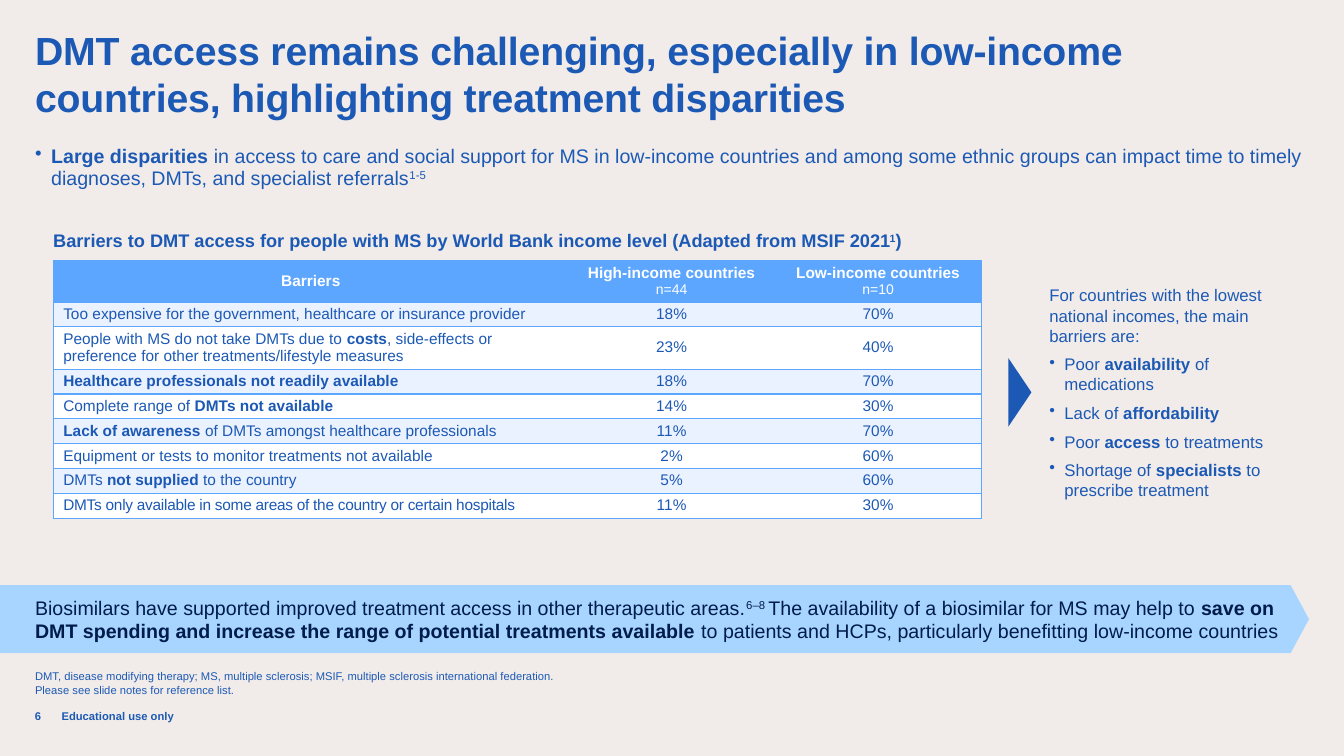
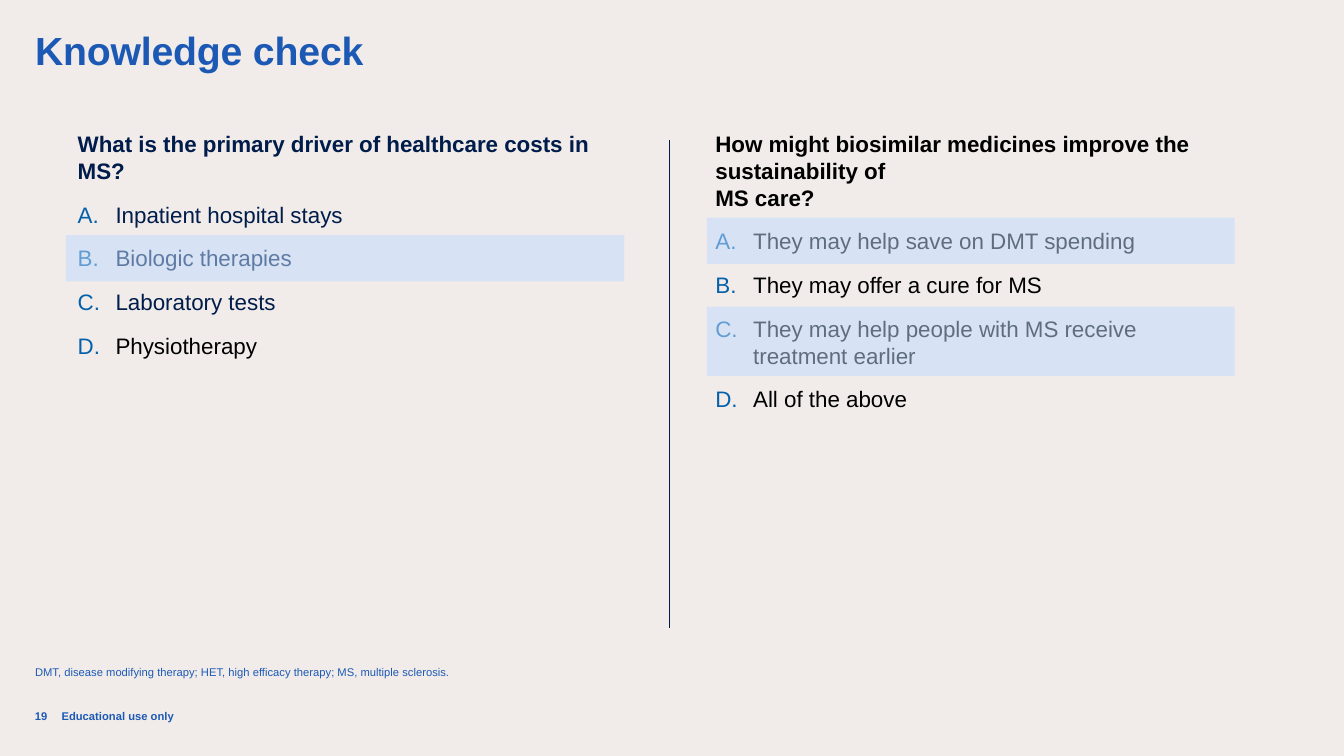
import pptx
import pptx.util
from lxml import etree
from pptx.dml.color import RGBColor
from pptx.enum.shapes import MSO_CONNECTOR, MSO_SHAPE
from pptx.enum.text import MSO_ANCHOR, PP_ALIGN
from pptx.oxml.ns import qn

Pt = pptx.util.Pt


class Theme:
    font = "Arial"
    paper, white, black = "F1ECE9", "FFFFFF", "000000"
    blue, navy, marker = "1C59B5", "001C4A", "0460A9"
    header, stripe, band, highlight = "5DA6FF", "EAF1FF", "A8D5FF", "BEDBFF"
    title, question, body, caption, aside, cell, cell_note, small = 28, 16, 14, 13, 12, 11, 10, 8
    left, width = 25, 910
    tight = 0.95


# In the texts, **...** is bold and ^...^ is superscript.
ACCESS = {
    "number": 6,
    "title": "DMT access remains challenging, especially in low-income countries, "
             "highlighting treatment disparities",
    "notes": ["DMT, disease modifying therapy; MS, multiple sclerosis; "
              "MSIF, multiple sclerosis international federation.",
              "Please see slide notes for reference list."],
    "notes_bottom": 498,
    "lead": "**Large disparities** in access to care and social support for MS in low-income "
            "countries and among some ethnic groups can impact time to timely diagnoses, DMTs, "
            "and specialist referrals^1-5^",
    "caption": "**Barriers to DMT access for people with MS by World Bank income level "
               "(Adapted from MSIF 2021^1^)**",
    "columns": [("Barriers", None, 368), ("High-income countries", "n=44", 147.5),
                ("Low-income countries", "n=10", 147.5)],
    "rows": [
        ("Too expensive for the government, healthcare or insurance provider", 18, 70),
        ("People with MS do not take DMTs due to **costs**, side-effects or preference "
         "for other treatments/lifestyle measures", 23, 40),
        ("**Healthcare professionals not readily available**", 18, 70),
        ("Complete range of **DMTs not available**", 14, 30),
        ("**Lack of awareness** of DMTs amongst healthcare professionals", 11, 70),
        ("Equipment or tests to monitor treatments not available", 2, 60),
        ("DMTs **not supplied** to the country", 5, 60),
        ("DMTs only available in some areas of the country or certain hospitals", 11, 30),
    ],
    "row_heights": [27.5, 17.3, 29] + [17.3] * 6,
    "aside_intro": "For countries with the lowest national incomes, the main barriers are:",
    "aside": ["Poor **availability** of medications", "Lack of **affordability**",
              "Poor **access** to treatments",
              "Shortage of **specialists** to\nprescribe treatment"],
    "message": "Biosimilars have supported improved treatment access in other therapeutic "
               "areas.^6–8 ^The availability of a biosimilar for MS may help to **save on DMT "
               "spending and increase the range of potential treatments available** to patients "
               "and HCPs, particularly benefitting low-income countries",
}
QUIZ = {
    "number": 19,
    "title": "Knowledge check",
    "notes": ["DMT, disease modifying therapy; HET, high efficacy therapy; MS, multiple sclerosis."],
    "notes_bottom": 484.8,
    "questions": [
        {"box": (55.5, 93, 400, 364),
         "question": ("What is the primary driver of healthcare costs in MS?", Theme.navy),
         "answers": [("Inpatient hospital stays", Theme.navy), ("Biologic therapies", Theme.navy),
                     ("Laboratory tests", Theme.navy), ("Physiotherapy", Theme.black)],
         "highlights": [(47, 168, 399, 33)]},
        {"box": (511, 93, 391, 364),
         "question": ("How might biosimilar medicines improve the sustainability of\nMS care?",
                      Theme.black),
         "answers": [("They may help save on DMT spending", Theme.black),
                     ("They may offer a cure for MS", Theme.black),
                     ("They may help people with MS receive\ntreatment earlier", Theme.black),
                     ("All of the above", Theme.black)],
         "highlights": [(505, 155.5, 377, 33), (505, 219, 377, 49.5)]},
    ],
}


def rgb(value):
    return RGBColor.from_string(value)


def write(p, text, size, color=Theme.blue, spacing=0):
    """Turn marked-up text into formatted runs; spacing is in hundredths of a point."""
    for i, weight in enumerate(text.split("**")):
        for j, level in enumerate(weight.split("^")):
            for k, line in enumerate(level.split("\n")):
                if k:
                    p.add_line_break()
                if not line:
                    continue
                r = p.add_run()
                r.text = line
                f = r.font
                f.name, f.size, f.bold = Theme.font, Pt(size), i % 2 == 1
                f.color.rgb = rgb(color)
                if j % 2:
                    f._element.set("baseline", "30000")
                if spacing:
                    f._element.set("spc", str(spacing))


def add_bullet(p, indent, color, char=None):
    """Hang a bullet character, or a capital letter when no character is given."""
    ppr = p._p.get_or_add_pPr()
    ppr.set("marL", str(Pt(indent)))
    ppr.set("indent", str(-Pt(indent)))
    clr = etree.SubElement(ppr, qn("a:buClr"))
    etree.SubElement(clr, qn("a:srgbClr"), val=color)
    if char:
        etree.SubElement(ppr, qn("a:buChar"), char=char)
    else:
        etree.SubElement(ppr, qn("a:buAutoNum"), type="alphaUcPeriod")


def set_frame(tf, margins=(0, 0, 0, 0), anchor=MSO_ANCHOR.TOP):
    tf.word_wrap = True
    tf.vertical_anchor = anchor
    tf.margin_left, tf.margin_top, tf.margin_right, tf.margin_bottom = map(Pt, margins)


def add_text(s, box, texts, size, color=Theme.blue, anchor=MSO_ANCHOR.TOP, spacing=0):
    tf = s.shapes.add_textbox(*map(Pt, box)).text_frame
    set_frame(tf, anchor=anchor)
    for i, text in enumerate(texts):
        p = tf.add_paragraph() if i else tf.paragraphs[0]
        write(p, text, size, color, spacing)
    return tf.paragraphs


def add_block(s, preset, box, fill, opacity=None):
    sp = s.shapes.add_shape(preset, *map(Pt, box))
    sp.shadow.inherit = False
    sp.line.fill.background()
    sp.fill.solid()
    sp.fill.fore_color.rgb = rgb(fill)
    if opacity:
        clr = sp._element.spPr.find(".//" + qn("a:srgbClr"))
        etree.SubElement(clr, qn("a:alpha"), val=str(opacity * 1000))
    return sp


def add_slide(prs, content):
    """Add a slide with the shared title, abbreviations and footer."""
    s = prs.slides.add_slide(prs.slide_layouts[6])
    s.background.fill.solid()
    s.background.fill.fore_color.rgb = rgb(Theme.paper)
    add_text(s, (Theme.left, 19, Theme.width, 87), [f"**{content['title']}**"],
             Theme.title, spacing=-10)
    height = 40
    notes = add_text(s, (Theme.left, content["notes_bottom"] - height, Theme.width, height),
                     content["notes"], Theme.small, anchor=MSO_ANCHOR.BOTTOM)
    for i, p in enumerate(notes):
        p.line_spacing = Theme.tight
        p.space_before = Pt(1 if i else 0)
    for x, w, text in ((Theme.left, 16, content["number"]), (44, 324, "Educational use only")):
        add_text(s, (x, 507, w, 14), [f"**{text}**"], Theme.small)
    return s


def set_borders(cell, visible):
    tcpr = cell._tc.get_or_add_tcPr()
    for i, side in enumerate("LRTB"):
        ln = etree.Element(qn(f"a:ln{side}"), w=str(Pt(1)))
        if side in visible:
            fill = etree.SubElement(ln, qn("a:solidFill"))
            etree.SubElement(fill, qn("a:srgbClr"), val=Theme.header)
        else:
            etree.SubElement(ln, qn("a:noFill"))
        tcpr.insert(i, ln)


def fill_cell(cell, lines, fill, color, centred, borders, spacing=0):
    """Fill a cell with (text, size) lines."""
    cell.margin_left = cell.margin_right = Pt(7.2)
    cell.margin_top = cell.margin_bottom = Pt(2.6)
    cell.vertical_anchor = MSO_ANCHOR.MIDDLE
    cell.fill.solid()
    cell.fill.fore_color.rgb = rgb(fill)
    set_borders(cell, borders)
    for i, (text, size) in enumerate(lines):
        p = cell.text_frame.add_paragraph() if i else cell.text_frame.paragraphs[0]
        p.line_spacing = Theme.tight
        p.alignment = PP_ALIGN.CENTER if centred else PP_ALIGN.LEFT
        write(p, text, size, color, spacing)


def add_barrier_table(s, columns, rows, heights):
    widths = [w for _, _, w in columns]
    table = s.shapes.add_table(len(heights), len(columns), Pt(38), Pt(186.5),
                               Pt(sum(widths)), Pt(sum(heights))).table
    for col, width in zip(table.columns, widths):
        col.width = Pt(width)
    for row, height in zip(table.rows, heights):
        row.height = Pt(height)
    borders = ["LTB", "TB", "TRB"]
    for c, (name, sample, _) in enumerate(columns):
        lines = [(f"**{name}**", Theme.cell)]
        if sample:
            lines.append((sample, Theme.cell_note))
        fill_cell(table.cell(0, c), lines, Theme.header, Theme.white, True, borders[c])
    for r, (barrier, *shares) in enumerate(rows, 1):
        fill = Theme.stripe if r % 2 else Theme.white
        for c, text in enumerate([barrier] + [f"{share}%" for share in shares]):
            tightened = r == len(rows) and c == 0
            fill_cell(table.cell(r, c), [(text, Theme.cell)], fill, Theme.blue, c > 0,
                      borders[c], -20 if tightened else 0)


def build_access(prs, content):
    s = add_slide(prs, content)
    lead = add_text(s, (Theme.left, 104, Theme.width, 56), [content["lead"]], Theme.body)[0]
    add_bullet(lead, 11.5, Theme.blue, "•")
    lead.line_spacing = Theme.tight
    add_text(s, (38, 164, 673, 13), [content["caption"]], Theme.caption)
    add_barrier_table(s, content["columns"], content["rows"], content["row_heights"])
    add_block(s, MSO_SHAPE.ISOSCELES_TRIANGLE, (704, 272, 49, 16.5), Theme.blue).rotation = 90
    aside = add_text(s, (749.5, 199, 178, 163), [content["aside_intro"]] + content["aside"],
                     Theme.aside, anchor=MSO_ANCHOR.MIDDLE)
    for i, p in enumerate(aside):
        p.space_after = Pt(6)
        if i:
            add_bullet(p, 10.8, Theme.blue, "•")
    band = add_block(s, MSO_SHAPE.PENTAGON, (0, 418, 935, 48.5), Theme.band)
    band.adjustments[0] = 0.27
    set_frame(band.text_frame, (25, 7.2, 11.5, 7.2), MSO_ANCHOR.MIDDLE)
    p = band.text_frame.paragraphs[0]
    p.alignment = PP_ALIGN.LEFT
    write(p, content["message"], Theme.body, Theme.navy)


def build_quiz(prs, content):
    s = add_slide(prs, content)
    for item in content["questions"]:
        question, color = item["question"]
        p = add_text(s, item["box"], [f"**{question}**"], Theme.question, color)[0]
        tf = s.shapes[-1].text_frame
        for answer, color in item["answers"]:
            p = tf.add_paragraph()
            p.space_before = Pt(12)
            add_bullet(p, 27, Theme.marker)
            write(p, answer, Theme.question, color)
        for box in item["highlights"]:
            add_block(s, MSO_SHAPE.RECTANGLE, box, Theme.highlight, opacity=50)
    divider = s.shapes.add_connector(MSO_CONNECTOR.STRAIGHT, Pt(478), Pt(100), Pt(478), Pt(448.5))
    divider.line.color.rgb = rgb(Theme.navy)
    divider.line.width = Pt(0.5)
    etree.SubElement(divider._element.spPr, qn("a:effectLst"))


def main():
    prs = pptx.Presentation()
    prs.slide_width, prs.slide_height = Pt(960), Pt(540)
    build_access(prs, ACCESS)
    build_quiz(prs, QUIZ)
    prs.save("out.pptx")


if __name__ == "__main__":
    main()
